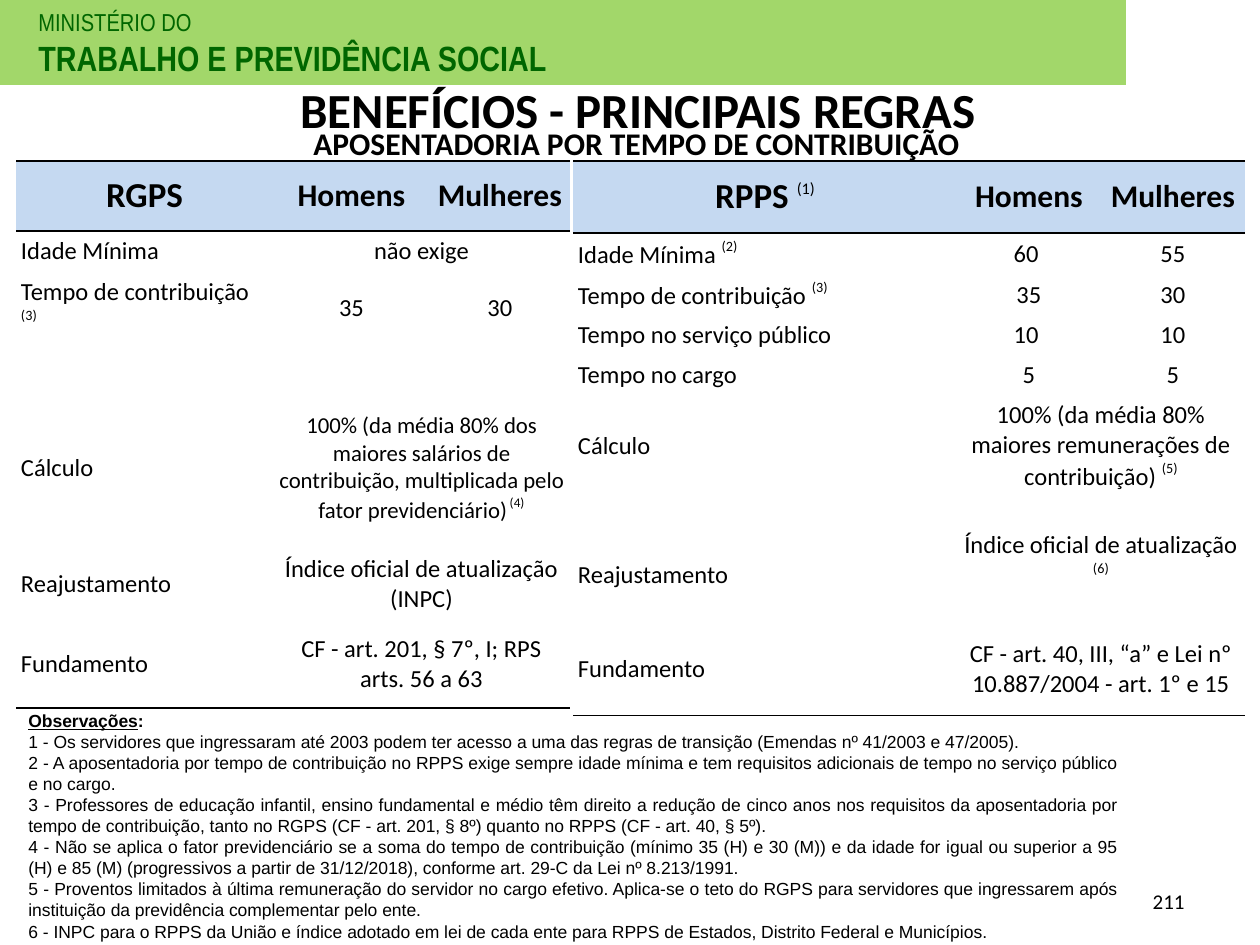
"""Builds the slide comparing RGPS and RPPS contribution-time retirement rules."""
import pptx
import pptx.dml.color
import pptx.enum.shapes
import pptx.enum.text
import pptx.oxml
import pptx.oxml.ns
import pptx.util
from lxml import etree

RGBColor = pptx.dml.color.RGBColor
ALIGN = pptx.enum.text.PP_ALIGN
ANCHOR = pptx.enum.text.MSO_ANCHOR

BLACK = RGBColor(0, 0, 0)
DARK_GREEN = RGBColor(0x00, 0x66, 0x00)
BAND_GREEN = RGBColor(0x92, 0xD0, 0x50)
HEADER_BLUE = RGBColor(0xC5, 0xD9, 0xF1)

PX = 914400 // 126
CELL_MARGIN = 5
LOWERED_MARGIN = 34
TABLE_TOP = 161

MINISTRY = [("MINISTÉRIO DO", 14, False), ("TRABALHO E PREVIDÊNCIA SOCIAL", 20, True)]
TITLE = "BENEFÍCIOS - PRINCIPAIS REGRAS"
SUBTITLE = "APOSENTADORIA POR TEMPO DE CONTRIBUIÇÃO"
PAGE_NUMBER = "211"

RGPS = {
    "left": 16,
    "columns": [257, 157, 140],
    "heights": [70, 41, 73, 44, 159, 73, 87],
    "rows": [
        ["RGPS", "Homens", "Mulheres"],
        ["Idade Mínima", "não exige"],
        ["Tempo de contribuição ^(3)", "35", "30"],
        ["", "", ""],
        ["Cálculo", "100% (da média 80% dos maiores salários de contribuição, "
                    "multiplicada pelo fator previdenciário)^ (4)"],
        ["Reajustamento", "Índice oficial de atualização (INPC)"],
        ["Fundamento", "CF - art. 201, § 7º, I; RPS arts. 56 a 63"],
    ],
    "sizes": {(4, 1): 13},
    "lowered": [],
}
RPPS = {
    "left": 573,
    "columns": [384, 144, 144],
    "heights": [72, 41, 41, 39, 39, 104, 125, 92],
    "rows": [
        ["RPPS ^(1)", "Homens", "Mulheres"],
        ["Idade Mínima ^(2)", "60 ", "55"],
        ["Tempo de contribuição ^(3)", "35", "30"],
        ["Tempo no serviço público", "10 ", "10"],
        ["Tempo no cargo", "5", "5"],
        ["Cálculo", "100% (da média 80% maiores remunerações de contribuição) ^(5)"],
        ["Reajustamento", "Índice oficial de atualização ^(6)"],
        ["Fundamento", "CF - art. 40, III, “a” e Lei nº 10.887/2004 - art. 1º e 15"],
    ],
    "sizes": {},
    "lowered": [(6, 0)],
}
NOTES = [
    "1 - Os servidores que ingressaram até 2003 podem ter acesso a uma das regras de transição (Emendas nº 41/2003 e 47/2005).",
    "2 - A aposentadoria por tempo de contribuição no RPPS exige sempre idade mínima e tem requisitos adicionais de tempo no serviço público e no cargo.",
    "3 - Professores de educação infantil, ensino fundamental e médio têm direito a redução de cinco anos nos requisitos da aposentadoria por tempo de contribuição, tanto no RGPS (CF - art. 201, § 8º) quanto no RPPS (CF - art. 40, § 5º).",
    "4 - Não se aplica o fator previdenciário se a soma do tempo de contribuição (mínimo 35 (H) e 30 (M)) e da idade for igual ou superior a 95 (H) e 85 (M) (progressivos a partir de 31/12/2018), conforme art. 29-C da Lei nº 8.213/1991.",
    "5 - Proventos limitados à última remuneração do servidor no cargo efetivo. Aplica-se o teto do RGPS para servidores que ingressarem após instituição da previdência complementar pelo ente.",
    "6 - INPC para o RPPS da União e índice adotado em lei de cada ente para RPPS de Estados, Distrito Federal e Municípios.",
]


def add_span(para, text, size, bold=False, font="Calibri", color=BLACK):
    span = para.add_run()
    span.text = text
    span.font.name = font
    span.font.size = pptx.util.Pt(size)
    span.font.bold = bold
    span.font.color.rgb = color
    return span


def add_box(page, left, top, width, height, anchor=ANCHOR.TOP):
    box = page.shapes.add_textbox(left * PX, top * PX, width * PX, height * PX)
    box.text_frame.word_wrap = True
    box.text_frame.vertical_anchor = anchor
    return box.text_frame


def add_line(page, text, size, area, align, bold=True, anchor=ANCHOR.MIDDLE):
    para = add_box(page, *area, anchor).paragraphs[0]
    para.alignment = align
    add_span(para, text, size, bold)
    return para


def set_borders(cell, black_sides):
    properties = cell._tc.get_or_add_tcPr()
    for side in "LRTB":
        line = etree.SubElement(properties, pptx.oxml.ns.qn(f"a:ln{side}"), w="12700")
        if side in black_sides:
            fill = etree.SubElement(line, pptx.oxml.ns.qn("a:solidFill"))
            etree.SubElement(fill, pptx.oxml.ns.qn("a:srgbClr"), val=str(BLACK))
        else:
            etree.SubElement(line, pptx.oxml.ns.qn("a:noFill"))


def fill_cell(cell, text, size, bold, align):
    margin = CELL_MARGIN * PX if text else 0
    cell.margin_left = cell.margin_right = margin
    cell.margin_top = cell.margin_bottom = margin
    cell.vertical_anchor = ANCHOR.MIDDLE
    if not text:
        return
    para = cell.text_frame.paragraphs[0]
    para.alignment = align
    body, _, mark = text.partition("^")
    add_span(para, body, size, bold)
    if mark:
        span = add_span(para, mark, 16 if bold else size)
        span._r.get_or_add_rPr().set("baseline", "50000")


def add_rules_table(page, plan):
    rows, columns, heights = plan["rows"], plan["columns"], plan["heights"]
    frame = page.shapes.add_table(len(rows), len(columns), plan["left"] * PX, TABLE_TOP * PX,
                                  sum(columns) * PX, sum(heights) * PX)
    table = frame.table
    table.first_row = table.horz_banding = False
    for column, width in zip(table.columns, columns):
        column.width = width * PX
    for r, (texts, height) in enumerate(zip(rows, heights)):
        table.rows[r].height = height * PX
        black_sides = {0: "TB", 1: "T", len(rows) - 1: "B"}.get(r, "")
        for c in range(len(columns)):
            cell = table.cell(r, c)
            set_borders(cell, black_sides)
            if r == 0:
                cell.fill.solid()
                cell.fill.fore_color.rgb = HEADER_BLUE
                size = 18 if c else 20
            else:
                cell.fill.background()
                size = plan["sizes"].get((r, c), 14)
            align = ALIGN.LEFT if r and c == 0 else ALIGN.CENTER
            fill_cell(cell, texts[c] if c < len(texts) else "", size, r == 0, align)
        if len(texts) < len(columns):
            table.cell(r, len(texts) - 1).merge(table.cell(r, len(columns) - 1))
    for r, c in plan["lowered"]:
        table.cell(r, c).margin_top = LOWERED_MARGIN * PX


def add_ministry_band(page):
    band = page.shapes.add_shape(pptx.enum.shapes.MSO_SHAPE.RECTANGLE, 0, 0, 1126 * PX, 85 * PX)
    band.shadow.inherit = False
    band.line.fill.background()
    band.fill.solid()
    band.fill.fore_color.rgb = BAND_GREEN
    color = band._element.spPr.find(".//" + pptx.oxml.ns.qn("a:srgbClr"))
    etree.SubElement(color, pptx.oxml.ns.qn("a:alpha"), val="85000")
    frame = add_box(page, 26, 1, 725, 84)
    for i, (text, size, bold) in enumerate(MINISTRY):
        para = frame.add_paragraph() if i else frame.paragraphs[0]
        add_span(para, text, size, bold, "Arial Narrow", DARK_GREEN)


def add_notes(page):
    frame = add_box(page, 16, 704, 1113, 244)
    heading = frame.paragraphs[0]
    add_span(heading, "Observações", 10, True, "Arial").font.underline = True
    add_span(heading, ":", 10, True, "Arial")
    for note in NOTES:
        para = frame.add_paragraph()
        para.alignment = ALIGN.JUSTIFY
        add_span(para, note, 10, False, "Arial")


def main():
    deck = pptx.Presentation()
    deck.slide_width, deck.slide_height = 1260 * PX, 945 * PX
    page = deck.slides.add_slide(deck.slide_layouts[6])
    add_ministry_band(page)
    add_line(page, PAGE_NUMBER, 12, (903, 876, 294, 50), ALIGN.RIGHT, bold=False)
    subtitle = add_line(page, SUBTITLE, 18, (59, 122, 1155, 59), ALIGN.CENTER, anchor=ANCHOR.TOP)
    subtitle.line_spacing = 0.9
    add_rules_table(page, RPPS)
    add_line(page, TITLE, 28, (260, 79, 756, 59), ALIGN.CENTER)
    add_notes(page)
    add_rules_table(page, RGPS)
    deck.save("out.pptx")


if __name__ == "__main__":
    main()
